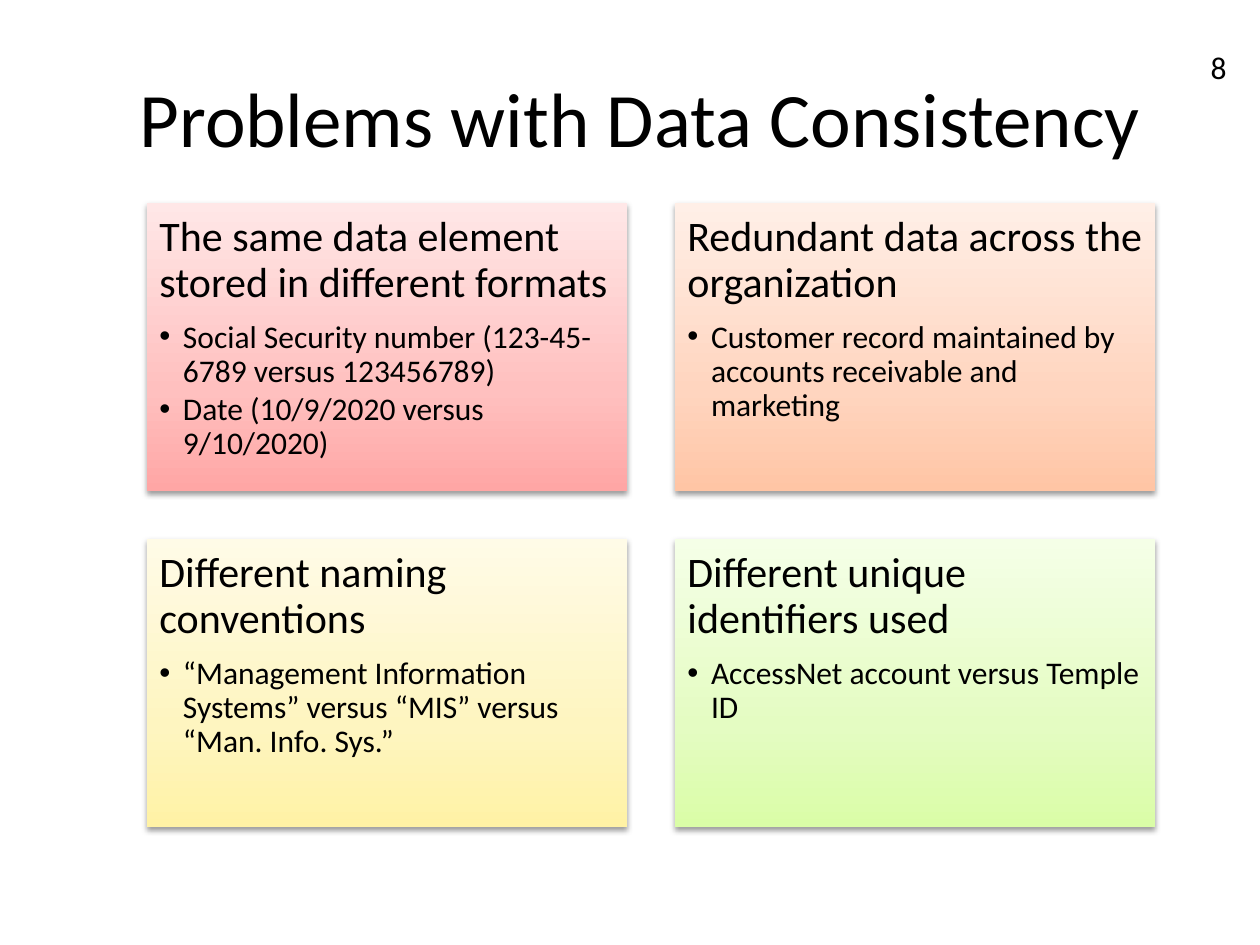
from lxml.etree import SubElement
from pptx import Presentation
from pptx.dml.color import RGBColor
from pptx.enum.shapes import MSO_SHAPE
from pptx.enum.text import MSO_ANCHOR, PP_ALIGN
from pptx.oxml.ns import qn
from pptx.util import Pt

COLORS = {
    "text": "000000",
    "shadow": "000000",
    # Gradient stops from the bottom edge to the top edge
    "red": ("FFA6A5", "FFC0BF", "FFE7E7"),
    "orange": ("FFC5A5", "FFD5BF", "FFEFE7"),
    "yellow": ("FFF2A5", "FEF5C0", "FFFBE7"),
    "green": ("DAFDA7", "E4FCC2", "F5FFE7"),
}
STOP_POSITIONS = (0, 35, 100)

# Card grid, in points
GRID_LEFT, GRID_TOP = 84, 116
CARD_WIDTH, CARD_HEIGHT, CARD_GAP = 274.3, 164.6, 27.4

PROBLEMS = [
    ("red", "The same data element stored in different formats",
     ["Social Security number (123-45-6789 versus 123456789)",
      "Date (10/9/2020 versus 9/10/2020)"]),
    ("orange", "Redundant data across the organization",
     ["Customer record maintained by accounts receivable and marketing"]),
    ("yellow", "Different naming conventions",
     ["“Management Information Systems” versus “MIS” versus “Man. Info. Sys.”"]),
    ("green", "Different unique identifiers used",
     ["AccessNet account versus Temple ID"]),
]

HEADING = {"alignment": PP_ALIGN.LEFT, "line_spacing": 0.9, "space_after": Pt(8.4)}
BULLET = {"alignment": PP_ALIGN.LEFT, "line_spacing": 0.9, "space_after": Pt(2.7),
          "level": 1}


def set_attributes(target, values):
    for name, value in values.items():
        setattr(target, name, value)


def place(shape, left, top, width, height):
    set_attributes(shape, {"left": Pt(left), "top": Pt(top),
                           "width": Pt(width), "height": Pt(height)})


def write(paragraph, text, size, paragraph_format):
    paragraph.text = text
    set_attributes(paragraph, paragraph_format)
    set_attributes(paragraph.font, {"name": "Calibri", "size": Pt(size)})
    paragraph.font.color.rgb = RGBColor.from_string(COLORS["text"])


def add_bullet(paragraph):
    properties = paragraph._p.get_or_add_pPr()
    properties.set("marL", str(Pt(13.5)))
    properties.set("indent", str(-Pt(13.5)))
    SubElement(properties, qn("a:buFont"), typeface="Arial")
    SubElement(properties, qn("a:buChar"), char="•")


def add_color(parent, color):
    return SubElement(parent, qn("a:srgbClr"), val=color)


def fill_gradient(shape, colors):
    shape.fill.gradient()
    shape.fill.gradient_angle = 90
    stops = shape._element.spPr.find(qn("a:gradFill")).find(qn("a:gsLst"))
    stops.clear()
    for position, color in zip(STOP_POSITIONS, colors):
        add_color(SubElement(stops, qn("a:gs"), pos=str(position * 1000)), color)


def add_shadow(shape):
    shape.shadow.inherit = False
    effects = shape._element.spPr.find(qn("a:effectLst"))
    shadow = SubElement(effects, qn("a:outerShdw"), blurRad=str(Pt(3.1)),
                        dist=str(Pt(1.6)), dir="5400000", rotWithShape="0")
    SubElement(add_color(shadow, COLORS["shadow"]), qn("a:alpha"), val="38000")


def add_title(slide, text):
    title = slide.shapes.title
    place(title, 24, 21.6, 684, 90)
    title.text_frame.vertical_anchor = MSO_ANCHOR.MIDDLE
    write(title.text_frame.paragraphs[0], text, 44, {"alignment": PP_ALIGN.CENTER})


def add_page_number(slide, text):
    box = slide.shapes.add_textbox(Pt(588), Pt(24), Pt(120), Pt(28.8))
    set_attributes(box.text_frame, {"word_wrap": True,
                                    "vertical_anchor": MSO_ANCHOR.MIDDLE})
    write(box.text_frame.paragraphs[0], text, 18, {"alignment": PP_ALIGN.RIGHT})


def add_card(slide, left, top, color_name, heading, bullets):
    card = slide.shapes.add_shape(MSO_SHAPE.RECTANGLE, Pt(left), Pt(top),
                                  Pt(CARD_WIDTH), Pt(CARD_HEIGHT))
    fill_gradient(card, COLORS[color_name])
    card.line.fill.background()
    add_shadow(card)

    frame = card.text_frame
    set_attributes(frame, {"word_wrap": True, "vertical_anchor": MSO_ANCHOR.TOP})
    set_attributes(frame, {f"margin_{side}": Pt(7.2)
                           for side in ("left", "top", "right", "bottom")})
    write(frame.paragraphs[0], heading, 24, HEADING)
    for bullet in bullets:
        paragraph = frame.add_paragraph()
        add_bullet(paragraph)
        write(paragraph, bullet, 18, BULLET)


def main():
    presentation = Presentation()
    set_attributes(presentation, {"slide_width": Pt(720), "slide_height": Pt(540)})
    slide = presentation.slides.add_slide(presentation.slide_layouts[5])

    # Header
    add_page_number(slide, "8")
    add_title(slide, "Problems with Data Consistency")

    # Two-by-two grid of problems
    for index, problem in enumerate(PROBLEMS):
        row, column = divmod(index, 2)
        add_card(slide, GRID_LEFT + column * (CARD_WIDTH + CARD_GAP),
                 GRID_TOP + row * (CARD_HEIGHT + CARD_GAP), *problem)

    presentation.save("out.pptx")


if __name__ == "__main__":
    main()
